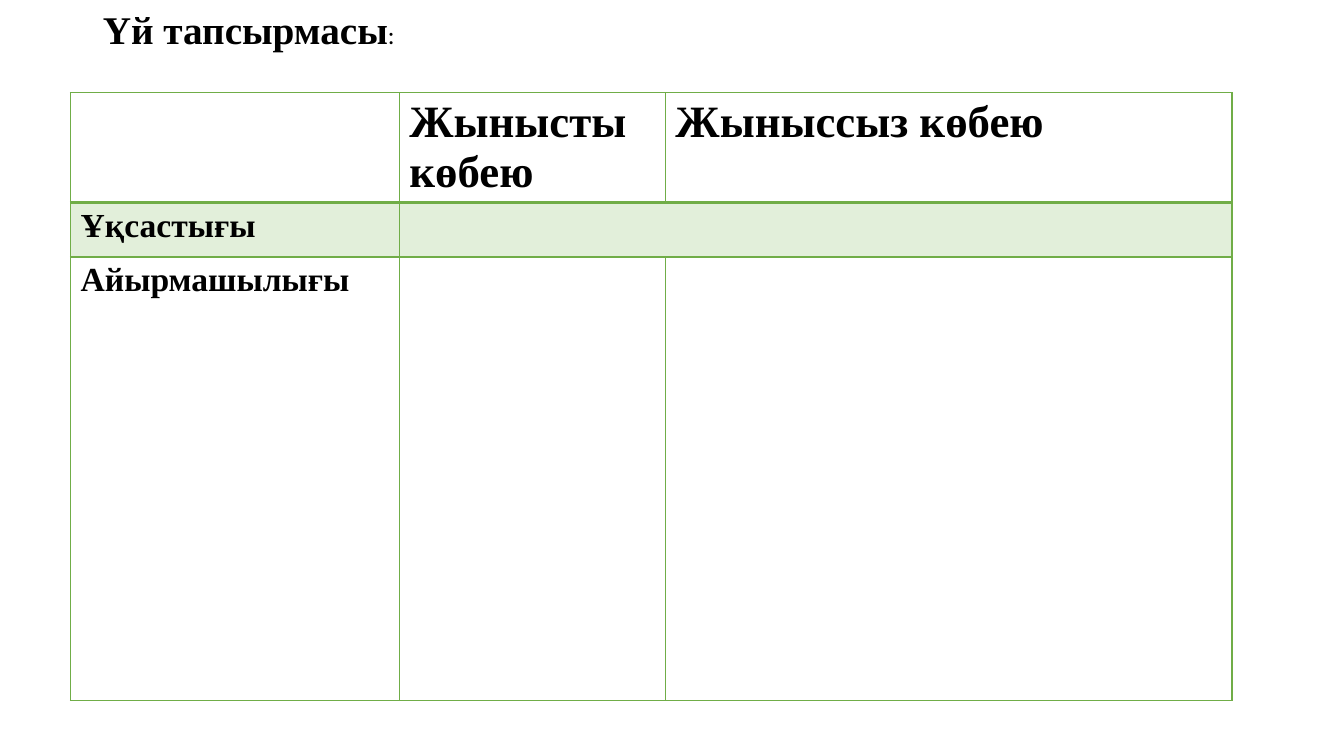
from lxml.etree import fromstring
from pptx import Presentation
from pptx.dml.color import RGBColor
from pptx.enum.text import MSO_ANCHOR, PP_ALIGN
from pptx.util import Inches, Pt

SERIF = "Times New Roman"
COLORS = {"ink": "000000", "line": "70AD47", "band": "E2EFDA"}
TITLE = [("Үй тапсырмасы", SERIF, 28, True), (":", "Calibri", 18, False)]
ROWS = [
    ["", "Жынысты көбею", "Жыныссыз көбею"],
    ["Ұқсастығы", "", ""],
    ["Айырмашылығы", "", ""],
]
WIDTHS = [3.26, 2.64, 5.62]
HEIGHTS = [1.09, 0.54, 4.4]
HEAD, BAND = 0, 1
NS = "http://schemas.openxmlformats.org/drawingml/2006/main"


def style(font, name, size, bold):
    font.name, font.size, font.bold = name, Pt(size), bold
    font.color.rgb = RGBColor.from_string(COLORS["ink"])


def border(cell, widths):
    """Draw the cell's sides; widths maps L, R, T and B to points."""
    props = cell._tc.get_or_add_tcPr()
    for spot, (side, width) in enumerate(widths.items()):
        props.insert(spot, fromstring(
            f'<a:ln{side} xmlns:a="{NS}" w="{Pt(width)}"><a:solidFill>'
            f'<a:srgbClr val="{COLORS["line"]}"/></a:solidFill></a:ln{side}>'))


def add_title(slide):
    title = slide.shapes.title
    title.left, title.top = Inches(0.92), Inches(0)
    title.width, title.height = Inches(6.71), Inches(0.57)
    frame = title.text_frame
    frame.word_wrap = True
    frame.vertical_anchor = MSO_ANCHOR.TOP
    para = frame.paragraphs[0]
    para.alignment = PP_ALIGN.LEFT
    para.line_spacing = 1.0
    for text, *look in TITLE:
        run = para.add_run()
        run.text = text
        style(run.font, *look)


def add_grid(slide):
    table = slide.shapes.add_table(
        len(ROWS), len(WIDTHS), Inches(0.7), Inches(0.92),
        Inches(sum(WIDTHS)), Inches(sum(HEIGHTS))).table
    table.first_row = table.horz_banding = False
    for col, width in zip(table.columns, WIDTHS):
        col.width = Inches(width)
    for r, texts in enumerate(ROWS):
        table.rows[r].height = Inches(HEIGHTS[r])
        for c, text in enumerate(texts):
            cell = table.cell(r, c)
            cell.text = text
            style(cell.text_frame.paragraphs[0].font,
                  SERIF, 32 if r == HEAD else 24, True)
            if r == BAND:
                cell.fill.solid()
                cell.fill.fore_color.rgb = RGBColor.from_string(COLORS["band"])
            else:
                cell.fill.background()
            border(cell, {"L": 1, "R": 1, "T": 2 if r == BAND else 1,
                          "B": 2 if r == HEAD else 1})
    table.cell(BAND, 1).merge(table.cell(BAND, 2))


def main():
    deck = Presentation()
    deck.slide_width, deck.slide_height = Inches(13.33), Inches(7.5)
    slide = deck.slides.add_slide(deck.slide_layouts[5])
    add_grid(slide)
    add_title(slide)
    deck.save("out.pptx")


if __name__ == "__main__":
    main()
